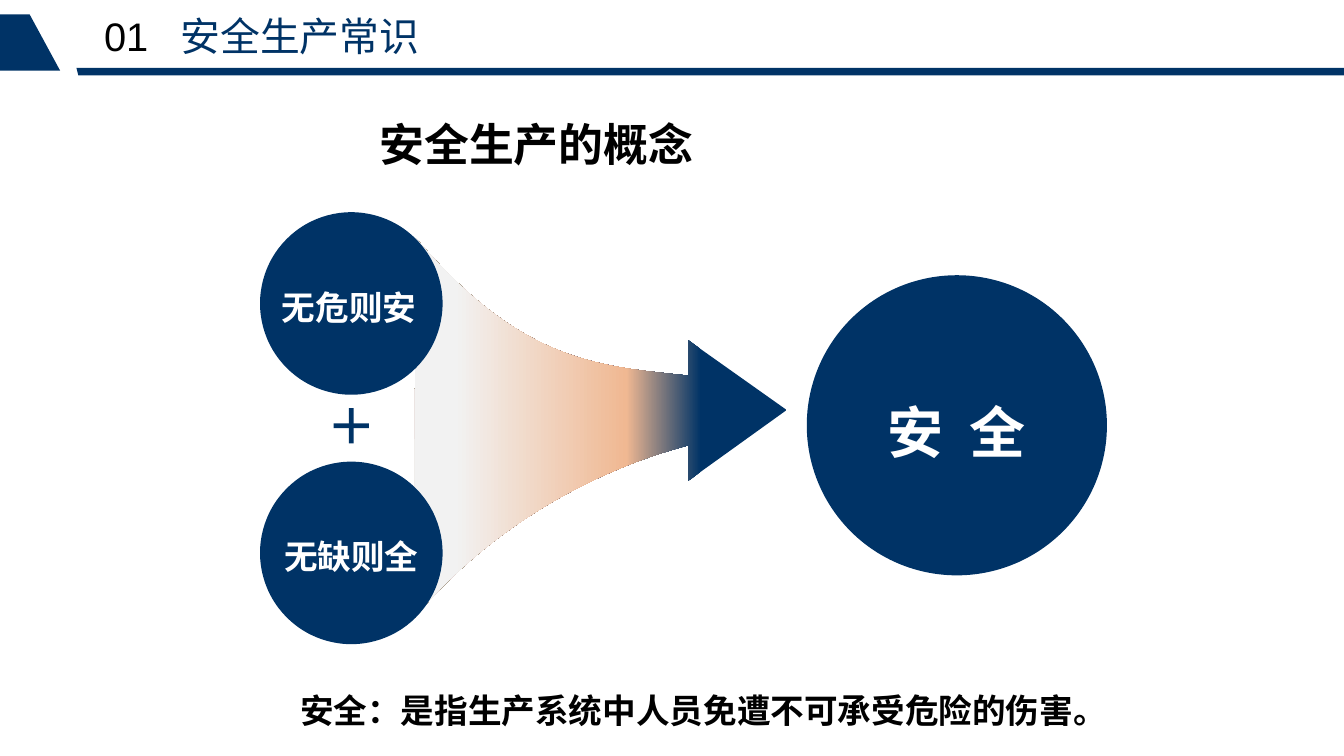
from copy import deepcopy

from lxml import etree
from pptx import Presentation
from pptx.dml.color import RGBColor
from pptx.enum import shapes, text
from pptx.oxml import ns
from pptx.util import Inches, Pt

NAVY = RGBColor(0x00, 0x33, 0x66)
PEACH = RGBColor(0xF0, 0xB8, 0x92)
PALE = RGBColor(0xF2, 0xF2, 0xF2)
WHITE = RGBColor(0xFF, 0xFF, 0xFF)
BLACK = RGBColor(0x00, 0x00, 0x00)
CHINESE_FONT = "Noto Sans CJK SC"

deck = Presentation()
deck.slide_width = Inches(14.06)
deck.slide_height = Inches(7.91)
page = deck.slides.add_slide(deck.slide_layouts[6])


def add_text(content, left, top, width, height, size, color=WHITE, bold=True,
             font=CHINESE_FONT, align=text.PP_ALIGN.LEFT, line_spacing=1.5,
             anchor=text.MSO_ANCHOR.TOP):
    """Add a one-line text box and return its span."""
    box = page.shapes.add_textbox(Inches(left), Inches(top), Inches(width), Inches(height))
    box.text_frame.word_wrap = True
    box.text_frame.vertical_anchor = anchor
    para = box.text_frame.paragraphs[0]
    para.alignment = align
    para.line_spacing = line_spacing
    span = para.add_run()
    span.text = content
    span.font.size = Pt(size)
    span.font.bold = bold
    span.font.color.rgb = color
    span.font.name = font
    east_asian = etree.SubElement(span.font._element, ns.qn("a:ea"))
    east_asian.set("typeface", CHINESE_FONT)
    return span


def add_outline(points):
    """Add a closed navy outline, given in inches, without a border."""
    corners = [(Inches(x), Inches(y)) for x, y in points]
    builder = page.shapes.build_freeform(*corners[0])
    builder.add_line_segments(corners[1:], close=True)
    outline = builder.convert_to_shape()
    outline.shadow.inherit = False
    outline.line.fill.background()
    outline.fill.solid()
    outline.fill.fore_color.rgb = NAVY
    return outline


# Funnel arrow: two Bezier edges joined by an arrowhead
upper_edge = [(4.35, 2.49), (5.46, 3.8), (6.26, 3.83), (7.2, 3.93)]
lower_edge = [(7.2, 4.66), (6.16, 4.93), (5.08, 5.56), (4.33, 6.47)]
arrowhead = [(7.2, 3.56), (8.23, 4.29), (7.2, 5.03)]
STEPS = 40
curves = []
for controls in (upper_edge, lower_edge):
    curve = []
    for step in range(STEPS + 1):
        t = step / STEPS
        weights = ((1 - t) ** 3, 3 * t * (1 - t) ** 2, 3 * t ** 2 * (1 - t), t ** 3)
        curve.append(tuple(sum(w * point[axis] for w, point in zip(weights, controls))
                           for axis in (0, 1)))
    curves.append(curve)
funnel = add_outline(curves[0] + arrowhead + curves[1])

funnel.fill.gradient()
funnel.fill.gradient_angle = 180
stop_list = funnel._element.spPr.find(".//" + ns.qn("a:gsLst"))
stop_list.append(deepcopy(stop_list[-1]))
stops = [(0.23, NAVY), (0.43, PEACH), (0.89, PALE)]
for stop, (position, color) in zip(funnel.fill.gradient_stops, stops):
    stop.position = position
    stop.color.rgb = color

# Circles and the two bars of the plus sign
ELLIPSE = shapes.MSO_SHAPE.OVAL
BAR = shapes.MSO_SHAPE.RECTANGLE
for kind, left, top, width, height in [
    (ELLIPSE, 2.72, 2.22, 1.91, 1.91),
    (ELLIPSE, 2.72, 4.83, 1.91, 1.91),
    (ELLIPSE, 8.44, 2.88, 3.14, 3.14),
    (BAR, 3.65, 4.27, 0.05, 0.37),
    (BAR, 3.49, 4.43, 0.37, 0.05),
]:
    shape = page.shapes.add_shape(kind, Inches(left), Inches(top), Inches(width), Inches(height))
    shape.shadow.inherit = False
    shape.fill.solid()
    shape.fill.fore_color.rgb = NAVY
    shape.line.fill.background()

# Circle labels
add_text("无危则安", 2.85, 2.74, 1.72, 0.74, 25.3)
add_text("无缺则全", 2.56, 5.35, 2.23, 0.74, 25.3, align=text.PP_ALIGN.CENTER)
safety = add_text("安 全", 9.19, 3.76, 1.95, 1.16, 42.2)
safety.font._element.set("spc", "500")

# Heading and definition
add_text("安全生产的概念", 3.87, 1.17, 3.86, 0.67, 33.8, color=BLACK,
         line_spacing=1, anchor=text.MSO_ANCHOR.MIDDLE)
add_text("安全：是指生产系统中人员免遭不可承受危险的伤害。", 2.71, 6.96, 9.3, 0.74, 25.3,
         color=BLACK, align=text.PP_ALIGN.CENTER)

# Page header: corner tab, rule, section number and title
add_outline([(0.31, 0.15), (0.63, 0.74), (0, 0.74), (0, 0.15)])
add_outline([(0.8, 0.71), (14.06, 0.71), (14.06, 0.79), (0.82, 0.79)])
add_text("01", 0.99, 0.07, 0.75, 0.5, 30, color=BLACK, bold=False,
         font="Arial", line_spacing=1)
add_text("安全生产常识", 1.79, 0.07, 7.87, 0.5, 30, color=NAVY, bold=False, line_spacing=1)

deck.save("out.pptx")
